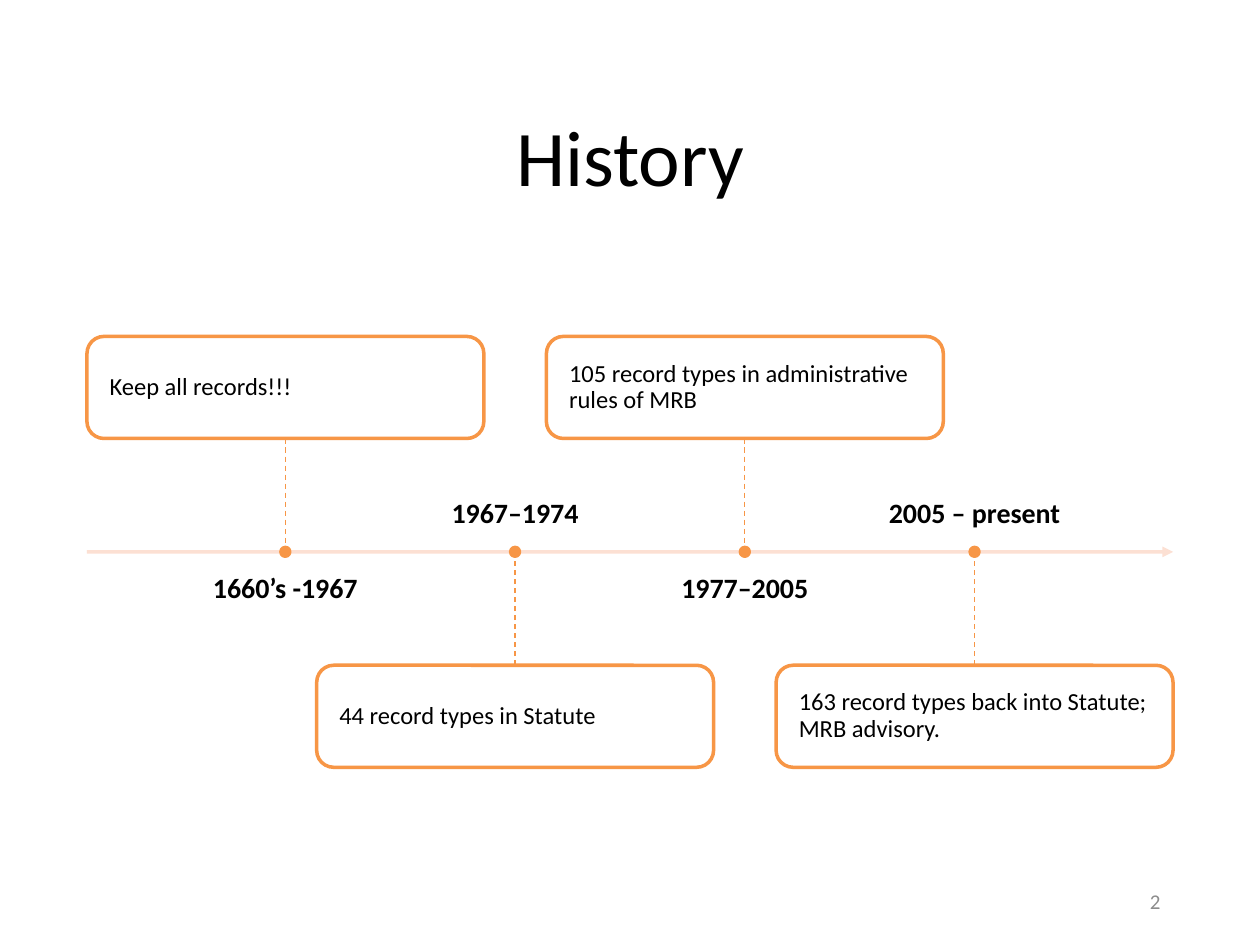
from lxml import etree
from pptx import Presentation
from pptx.dml.color import RGBColor
from pptx.enum import dml, shapes, text
from pptx.oxml import ns
from pptx.util import Inches, Pt

# Content: period and what was kept; boxes alternate above and below the axis
TITLE = "History"
PAGE_NUMBER = "2"
PERIODS = [
    ("1660’s -1967", "Keep all records!!!"),
    ("1967–1974", "44 record types in Statute"),
    ("1977–2005", "105 record types in administrative rules of MRB"),
    ("2005 – present", "163 record types back into Statute; MRB advisory."),
]

# Look
FONT = "Calibri"
BLACK, GREY, WHITE = "000000", "8C8C8C", "FFFFFF"
ORANGE, PEACH = "F79646", "FCDDCF"

# Timeline geometry in inches
AXIS_LEFT, AXIS_RIGHT, AXIS_Y = 0.69, 9.31, 4.38
BOX_WIDTH, BOX_HEIGHT = 3.15, 0.81
BOX_GAP = 0.9
LABEL_WIDTH, LABEL_HEIGHT, LABEL_GAP = 2.77, 0.54, 0.18
DOT = 0.07
FIRST_X = AXIS_LEFT + BOX_WIDTH / 2
STEP = (AXIS_RIGHT - AXIS_LEFT - BOX_WIDTH) / (len(PERIODS) - 1)


def color(hex_value):
    return RGBColor.from_string(hex_value)


def add_xml(parent, tag, **attributes):
    return etree.SubElement(parent, ns.qn(tag), attributes)


def set_transparency(fill_parent):
    """Make the solid fill below this element 90% opaque."""
    solid = fill_parent.find(ns.qn("a:solidFill"))
    add_xml(solid[0], "a:alpha", val="90000")


def write(shape, words, size, hex_value=BLACK, bold=False, align="LEFT",
          anchor="MIDDLE", inset=0.0, spacing=None):
    frame = shape.text_frame
    frame.text = words
    frame_format = {"word_wrap": True, "auto_size": text.MSO_AUTO_SIZE.NONE,
                    "vertical_anchor": text.MSO_ANCHOR[anchor]}
    for side in ("left", "right", "top", "bottom"):
        frame_format["margin_" + side] = Inches(inset)
    for name, value in frame_format.items():
        setattr(frame, name, value)
    paragraph = frame.paragraphs[0]
    paragraph.alignment = text.PP_ALIGN[align]
    paragraph.line_spacing = spacing
    font = paragraph.runs[0].font
    for name, value in {"name": FONT, "size": Pt(size), "bold": bold}.items():
        setattr(font, name, value)
    font.color.rgb = color(hex_value)


def add_shape(slide, kind, left, top, width, height, fill):
    shape = slide.shapes.add_shape(
        kind, Inches(left), Inches(top), Inches(width), Inches(height))
    shape.shadow.inherit = False
    shape.fill.solid()
    shape.fill.fore_color.rgb = color(fill)
    shape.line.color.rgb = color(ORANGE)
    shape.line.width = Pt(2)
    return shape


def add_text_box(slide, left, top, width, height):
    return slide.shapes.add_textbox(
        Inches(left), Inches(top), Inches(width), Inches(height))


def add_line(slide, start, end, hex_value, width):
    points = [Inches(value) for value in (*start, *end)]
    connector = slide.shapes.add_connector(shapes.MSO_CONNECTOR.STRAIGHT, *points)
    connector.line.color.rgb = color(hex_value)
    connector.line.width = Pt(width)
    add_xml(connector._element.spPr, "a:effectLst")
    return connector


def add_axis(slide):
    axis = add_line(slide, (AXIS_LEFT, AXIS_Y), (AXIS_RIGHT, AXIS_Y), PEACH, 2)
    outline = axis._element.spPr.find(ns.qn("a:ln"))
    set_transparency(outline)
    add_xml(outline, "a:tailEnd", type="triangle")


def add_period(slide, index, label, description):
    x = FIRST_X + index * STEP
    above = index % 2 == 0
    if above:
        box_edge = AXIS_Y - BOX_GAP
        box_top, label_top = box_edge - BOX_HEIGHT, AXIS_Y + LABEL_GAP
    else:
        box_edge = box_top = AXIS_Y + BOX_GAP
        label_top = AXIS_Y - LABEL_GAP - LABEL_HEIGHT

    # Date on the side of the axis opposite to the box
    date = add_text_box(slide, x + 0.0 - LABEL_WIDTH / 2, label_top,
                        LABEL_WIDTH, LABEL_HEIGHT)
    write(date, label, 16, bold=True, align="CENTER",
          anchor="TOP" if above else "BOTTOM", spacing=0.9)

    # Description box
    box = add_shape(slide, shapes.MSO_SHAPE.ROUNDED_RECTANGLE,
                    x - BOX_WIDTH / 2, box_top, BOX_WIDTH, BOX_HEIGHT, WHITE)
    set_transparency(box._element.spPr)
    write(box, description, 14, inset=0.14, spacing=0.9)

    # Dashed leader and dot
    leader = add_line(slide, (x, box_edge), (x, AXIS_Y), ORANGE, 0.75)
    leader.line.dash_style = dml.MSO_LINE.DASH
    add_shape(slide, shapes.MSO_SHAPE.OVAL, x - DOT / 2, AXIS_Y - DOT / 2,
              DOT, DOT, ORANGE)


def main():
    presentation = Presentation()
    presentation.slide_width = Inches(10)
    presentation.slide_height = Inches(7.5)
    slide = presentation.slides.add_slide(presentation.slide_layouts[5])

    # Title and page number
    title = slide.shapes.title
    place = {"left": 0.69, "top": 0.61, "width": 8.62, "height": 1.24}
    for name, value in place.items():
        setattr(title, name, Inches(value))
    write(title, TITLE, 45, align="CENTER", inset=0.05)
    number = add_text_box(slide, 7.06, 6.95, 2.25, 0.4)
    write(number, PAGE_NUMBER, 12, GREY, align="RIGHT", inset=0.1)

    # Timeline
    add_axis(slide)
    for index, (label, description) in enumerate(PERIODS):
        add_period(slide, index, label, description)

    presentation.save("out.pptx")


if __name__ == "__main__":
    main()
